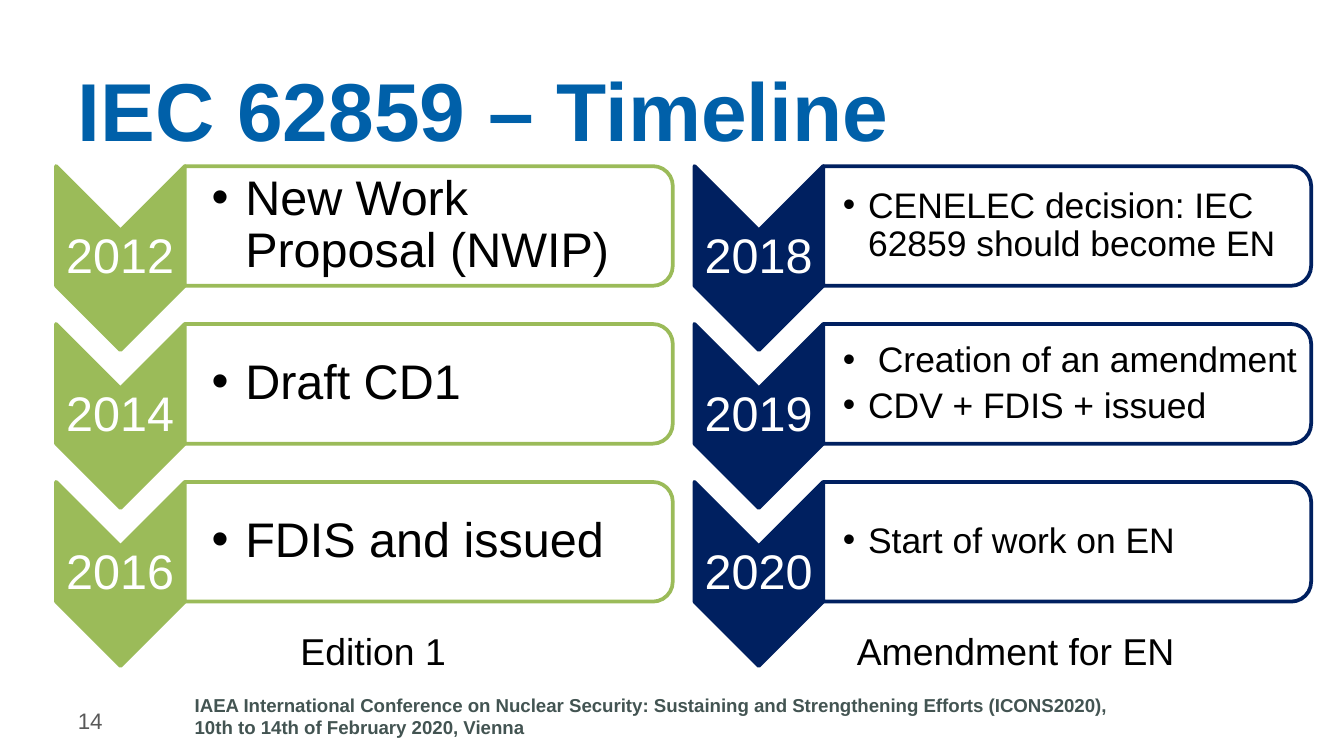
from lxml import etree
from pptx import Presentation
from pptx.dml.color import RGBColor
from pptx.enum.shapes import MSO_SHAPE
from pptx.enum.text import MSO_ANCHOR, PP_ALIGN
from pptx.oxml.ns import qn
from pptx.util import Pt

CHEVRON = MSO_SHAPE.CHEVRON
ROUNDED_PANEL = MSO_SHAPE.ROUND_2_SAME_RECTANGLE
TOP, MIDDLE = MSO_ANCHOR.TOP, MSO_ANCHOR.MIDDLE
CENTER = PP_ALIGN.CENTER

WHITE = RGBColor(0xFF, 0xFF, 0xFF)
BLACK = RGBColor(0x00, 0x00, 0x00)
BLUE = RGBColor(0x00, 0x60, 0xA9)
GREEN = RGBColor(0x9B, 0xBB, 0x59)
NAVY = RGBColor(0x00, 0x20, 0x60)
SLATE = RGBColor(0x43, 0x54, 0x52)
GREY = RGBColor(0x59, 0x59, 0x59)

FONT = "Arial"
DEFAULT_INSETS = (7.2, 3.6, 7.2, 3.6)
TIMELINE_TOP, ROW_PITCH = 89, 84.6
CHEVRON_WIDTH, CHEVRON_HEIGHT = 69, 98.6
PANEL_WIDTH, PANEL_HEIGHT = 261.4, 64.1

EDITION_STEPS = [
    ("2012", ["New Work Proposal (NWIP)"]),
    ("2014", ["Draft CD1"]),
    ("2016", ["FDIS and issued"]),
]
AMENDMENT_STEPS = [
    ("2018", ["CENELEC decision: IEC 62859 should become EN"]),
    ("2019", [" Creation of an amendment", "CDV + FDIS + issued"]),
    ("2020", ["Start of work on EN"]),
]


def add_bullet(paragraph, indent):
    properties = paragraph._p.get_or_add_pPr()
    properties.set("marL", str(Pt(indent)))
    properties.set("indent", str(-Pt(indent)))
    etree.SubElement(properties, qn("a:buFont")).set("typeface", FONT)
    etree.SubElement(properties, qn("a:buChar")).set("char", "•")


def add_text(slide, box, lines, size, color, bold=False, anchor=TOP,
             alignment=None, insets=DEFAULT_INSETS, spacing=None,
             bullet_indent=None, gap=0):
    """Place one paragraph per line; gap is the space between paragraphs."""
    shape = slide.shapes.add_textbox(*map(Pt, box))
    frame = shape.text_frame
    frame.text = "\n".join(lines)
    frame.word_wrap = True
    frame.vertical_anchor = anchor
    (frame.margin_left, frame.margin_top,
     frame.margin_right, frame.margin_bottom) = map(Pt, insets)
    for index, paragraph in enumerate(frame.paragraphs):
        if bullet_indent:
            add_bullet(paragraph, bullet_indent)
        if alignment is not None:
            paragraph.alignment = alignment
        if spacing:
            paragraph.line_spacing = spacing
        if index and gap:
            paragraph.space_before = Pt(gap)
        for run in paragraph.runs:
            run.font.name = FONT
            run.font.size = Pt(size)
            run.font.bold = bold
            run.font.color.rgb = color


def add_turned_shape(slide, kind, box, fill, line):
    """Add a shape turned by 90 degrees that covers the box once turned."""
    left, top, width, height = box
    shift = (width - height) / 2
    shape = slide.shapes.add_shape(
        kind, Pt(left + shift), Pt(top - shift), Pt(height), Pt(width))
    shape.rotation = 90
    shape.shadow.inherit = False
    shape.fill.solid()
    shape.fill.fore_color.rgb = fill
    shape.line.color.rgb = line
    shape.line.width = Pt(2)


def add_step(slide, left, top, year, items, color, size, bullet_indent, inset):
    add_turned_shape(slide, CHEVRON, (left, top, CHEVRON_WIDTH, CHEVRON_HEIGHT),
                     color, color)
    add_text(slide, (left, top + CHEVRON_WIDTH / 2, CHEVRON_WIDTH, 29.6), [year],
             26, WHITE, anchor=MIDDLE, alignment=CENTER,
             insets=(1.2,) * 4, spacing=0.9)
    panel_left = left + CHEVRON_WIDTH
    add_turned_shape(slide, ROUNDED_PANEL,
                     (panel_left, top, PANEL_WIDTH, PANEL_HEIGHT), WHITE, color)
    add_text(slide, (panel_left, top + 3, PANEL_WIDTH - 3, PANEL_HEIGHT - 6),
             items, size, BLACK, anchor=MIDDLE, insets=(inset, 1, 1, 1),
             spacing=0.9, bullet_indent=bullet_indent, gap=4)


def add_timeline(slide, left, steps, **style):
    for row, (year, items) in enumerate(steps):
        add_step(slide, left, TIMELINE_TOP + row * ROW_PITCH, year, items, **style)


def add_caption(slide, left, text):
    add_text(slide, (left, 336.5, 200, 24), [text], 20, BLACK, insets=(0,) * 4)


def add_footer(slide):
    add_text(slide, (97.2, 368, 563, 32),
             ["IAEA International Conference on Nuclear Security: Sustaining and "
              "Strengthening Efforts (ICONS2020),",
              "10th to 14th of February 2020, Vienna"], 10, SLATE, bold=True)
    add_text(slide, (34.6, 375, 62.6, 21.6), ["14"], 12, GREY, anchor=MIDDLE)


def main():
    presentation = Presentation()
    presentation.slide_width, presentation.slide_height = Pt(720), Pt(405)
    slide = presentation.slides.add_slide(presentation.slide_layouts[6])
    add_footer(slide)
    add_text(slide, (34.6, 10.8, 670, 95), ["IEC 62859 – Timeline"], 44, BLUE,
             bold=True, anchor=MIDDLE)
    add_timeline(slide, 30, EDITION_STEPS, color=GREEN, size=26,
                 bullet_indent=18, inset=14.4)
    add_timeline(slide, 372, AMENDMENT_STEPS, color=NAVY, size=19,
                 bullet_indent=13.5, inset=10.6)
    add_caption(slide, 161, "Edition 1")
    add_caption(slide, 459, "Amendment for EN")
    presentation.save("out.pptx")


if __name__ == "__main__":
    main()
